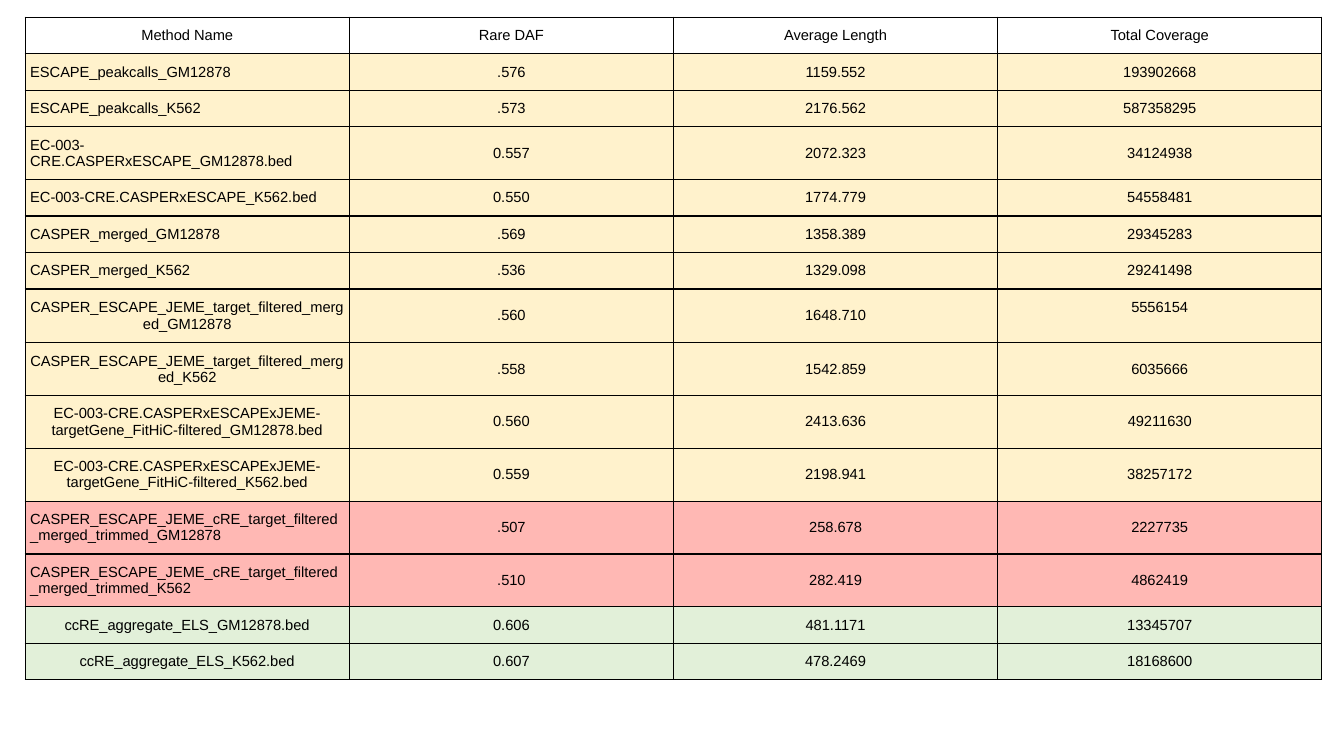
from pptx import Presentation, util as u
from pptx.dml.color import RGBColor
from pptx.enum import text
from pptx.oxml import parse_xml
from pptx.oxml.ns import nsdecls

BLACK = RGBColor(0x00, 0x00, 0x00)
CREAM = RGBColor(0xFF, 0xF2, 0xCC)
PINK = RGBColor(0xFF, 0xB8, 0xB4)
GREEN = RGBColor(0xE2, 0xF0, 0xD9)

LEFT, MID = text.PP_ALIGN.LEFT, text.PP_ALIGN.CENTER
ONE, TWO = 0.36, 0.52  # heights of rows with one and two lines
LINE = 0.17

# Row groups: fill, alignment of the name, row height, rows
HEADS = ("Method Name", "Rare DAF", "Average Length", "Total Coverage")
GROUPS = [
    (None, MID, ONE, [HEADS]),
    (CREAM, LEFT, ONE, [
        ("ESCAPE_peakcalls_GM12878", ".576", "1159.552", "193902668"),
        ("ESCAPE_peakcalls_K562", ".573", "2176.562", "587358295")]),
    (CREAM, LEFT, TWO, [
        ("EC-003-CRE.CASPERxESCAPE_GM12878.bed", "0.557", "2072.323", "34124938")]),
    (CREAM, LEFT, ONE, [
        ("EC-003-CRE.CASPERxESCAPE_K562.bed", "0.550", "1774.779", "54558481"),
        ("CASPER_merged_GM12878", ".569", "1358.389", "29345283"),
        ("CASPER_merged_K562", ".536", "1329.098", "29241498")]),
    (CREAM, MID, TWO, [
        ("CASPER_ESCAPE_JEME_target_filtered_merged_GM12878",
         ".560", "1648.710", "5556154"),
        ("CASPER_ESCAPE_JEME_target_filtered_merged_K562",
         ".558", "1542.859", "6035666"),
        ("EC-003-CRE.CASPERxESCAPExJEME-targetGene_FitHiC-filtered_GM12878.bed",
         "0.560", "2413.636", "49211630"),
        ("EC-003-CRE.CASPERxESCAPExJEME-targetGene_FitHiC-filtered_K562.bed",
         "0.559", "2198.941", "38257172")]),
    (PINK, LEFT, TWO, [
        ("CASPER_ESCAPE_JEME_cRE_target_filtered_merged_trimmed_GM12878",
         ".507", "258.678", "2227735"),
        ("CASPER_ESCAPE_JEME_cRE_target_filtered_merged_trimmed_K562",
         ".510", "282.419", "4862419")]),
    (GREEN, MID, ONE, [
        ("ccRE_aggregate_ELS_GM12878.bed", "0.606", "481.1171", "13345707"),
        ("ccRE_aggregate_ELS_K562.bed", "0.607", "478.2469", "18168600")]),
]


class Deck:
    def __init__(self, font, size):
        self.font, self.size = font, u.Pt(size)
        self.prs = Presentation()
        self.prs.slide_width = u.Inches(13.33)
        self.prs.slide_height = u.Inches(7.5)
        self.slide = self.prs.slides.add_slide(self.prs.slide_layouts[6])

    def table(self, left, top, width, groups):
        rows = [(fill, side, high, row)
                for fill, side, high, block in groups for row in block]
        total = sum(high for _, _, high, _ in rows)
        grid = self.slide.shapes.add_table(
            len(rows), len(HEADS), u.Inches(left), u.Inches(top),
            u.Inches(width), u.Inches(total)).table
        grid.first_row = grid.horz_banding = False
        for r, (fill, side, high, row) in enumerate(rows):
            grid.rows[r].height = u.Inches(high)
            for c, words in enumerate(row):
                self.cell(grid.cell(r, c), words, fill, MID if c else side)
        return grid

    def cell(self, cell, words, fill, side):
        cell.margin_left = cell.margin_right = u.Inches(0.05)
        cell.margin_top = cell.margin_bottom = u.Inches(0.1)
        cell.vertical_anchor = text.MSO_ANCHOR.MIDDLE
        self.border(cell)
        if fill is None:
            cell.fill.background()
        else:
            cell.fill.solid()
            cell.fill.fore_color.rgb = fill
        cell.text_frame.text = words
        para = cell.text_frame.paragraphs[0]
        para.alignment = side
        font = para.runs[0].font
        font.name, font.size, font.color.rgb = self.font, self.size, BLACK

    def border(self, cell):
        props = cell._tc.get_or_add_tcPr()
        for edge in "LRTB":
            props.append(parse_xml(
                f'<a:ln{edge} {nsdecls("a")} w="{u.Pt(1)}"><a:solidFill>'
                f'<a:srgbClr val="{BLACK}"/></a:solidFill></a:ln{edge}>'))


def main():
    deck = Deck("Arial", 10.5)

    # Method comparison
    grid = deck.table(0.25, 0.17, 12.86, GROUPS)

    # One coverage value sits half a line higher than its row
    grid.cell(7, 3).margin_bottom = u.Inches(0.1 + LINE)

    deck.prs.save("out.pptx")


if __name__ == "__main__":
    main()
